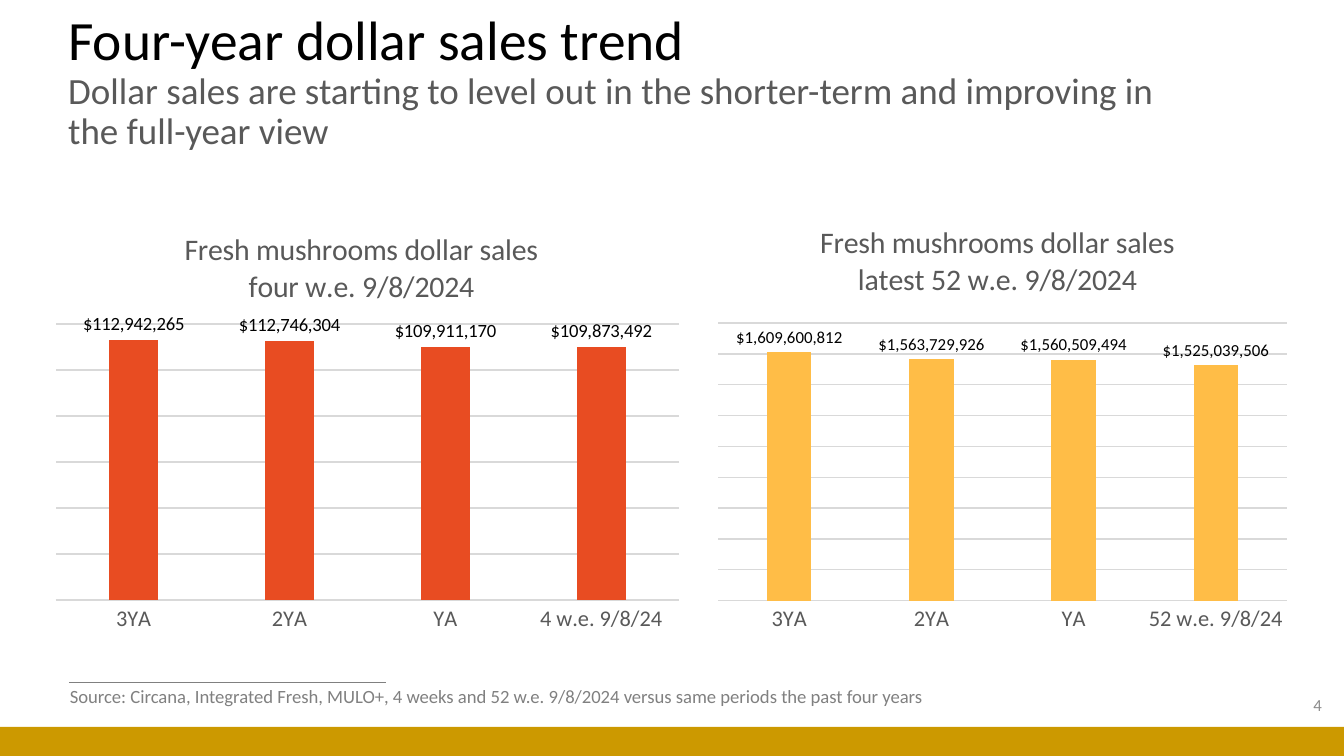
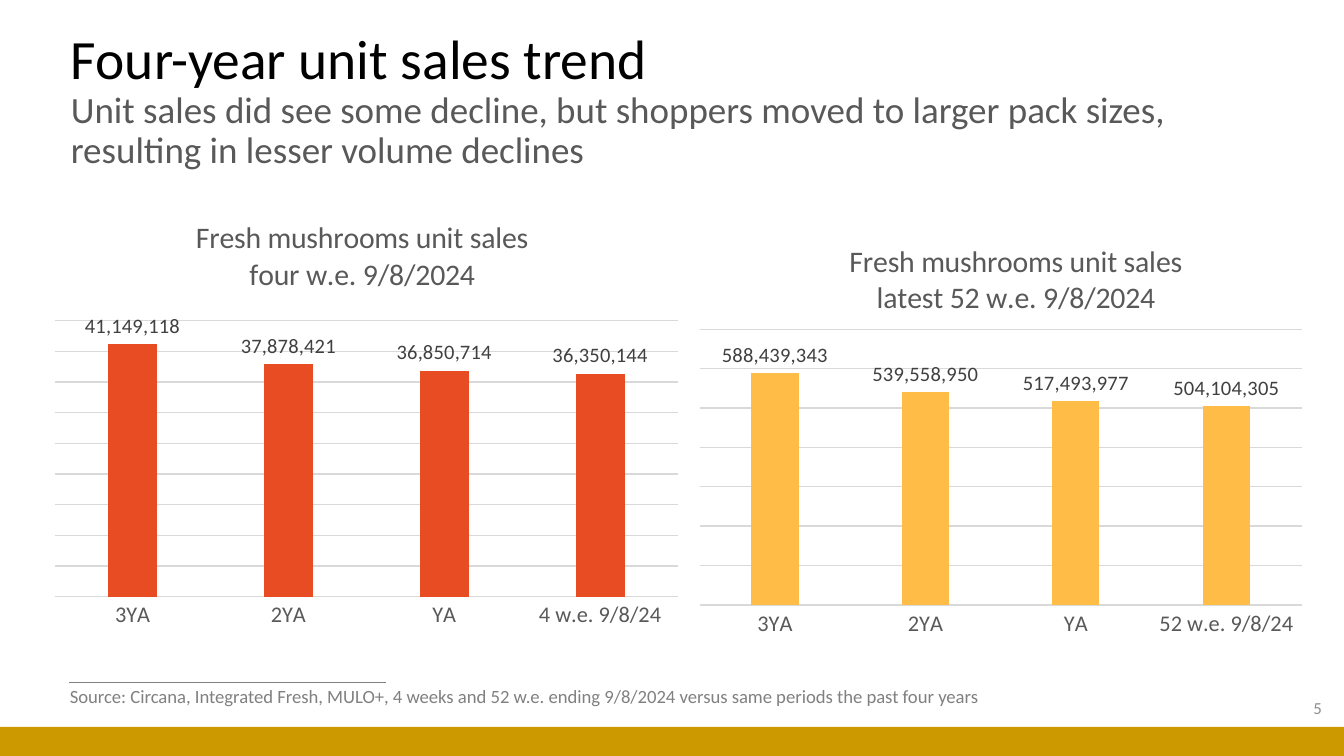
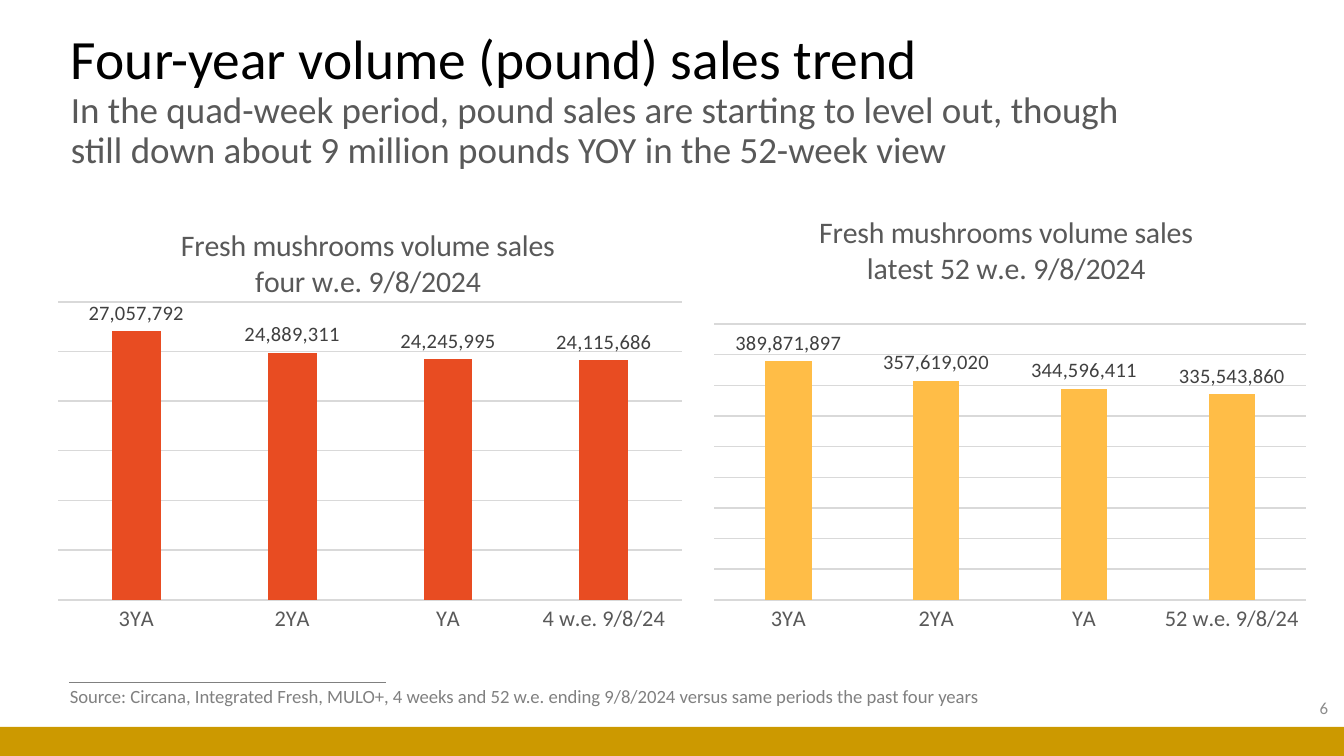
from lxml.etree import SubElement
from pptx import Presentation
from pptx.chart.data import CategoryChartData
from pptx.dml.color import RGBColor
from pptx.enum.chart import XL_CHART_TYPE, XL_LABEL_POSITION, XL_TICK_MARK
from pptx.enum.shapes import MSO_CONNECTOR, MSO_SHAPE
from pptx.enum.text import MSO_ANCHOR, MSO_AUTO_SIZE, PP_ALIGN
from pptx.oxml.ns import qn
from pptx.util import Cm, Pt

FOUR_WEEKS = "4 w.e. 9/8/24"
FULL_YEAR = "52 w.e. 9/8/24"
DOLLARS = r"\$#,##0"
UNITS = "#,##0"


def color(value):
    """Turn a hex string into a colour."""
    return RGBColor.from_string(value)


def set_layout(parent, index, **fractions):
    """Place a chart part by fractions of the chart size."""
    for old_layout in parent.findall(qn("c:layout")):
        parent.remove(old_layout)
    layout = SubElement(parent, qn("c:layout"))
    parent.insert(index, layout)
    manual = SubElement(layout, qn("c:manualLayout"))
    if "w" in fractions:
        SubElement(manual, qn("c:layoutTarget")).set("val", "inner")
    for name in ("x", "y"):
        SubElement(manual, qn(f"c:{name}Mode")).set("val", "edge")
    for name, fraction in fractions.items():
        SubElement(manual, qn(f"c:{name}")).set("val", str(fraction))


class Deck:
    """Holds the shared style and the current slide."""

    font_name = "Calibri"
    black, dark, label_gray = "000000", "595959", "404040"
    number_gray, source_gray, grid = "8C8C8C", "808080", "D9D9D9"
    gold, red, yellow = "CC9900", "E84C22", "FFBD47"

    def __init__(self):
        """Start an empty widescreen presentation."""
        self.presentation = Presentation()
        self.presentation.slide_width = Cm(25.4)
        self.presentation.slide_height = Cm(14.29)
        self.slide = None

    def style(self, font, size, fill):
        """Set the face, size, weight and colour of a font."""
        font.name = self.font_name
        font.size = Pt(size)
        font.bold = False
        font.color.rgb = color(fill)

    def add_run(self, paragraph, text, size, fill):
        """Add one styled run."""
        run = paragraph.add_run()
        run.text = text
        self.style(run.font, size, fill)

    def add_box(self, box, anchor=MSO_ANCHOR.TOP):
        """Add a wrapping text box and return its text frame."""
        frame = self.slide.shapes.add_textbox(*map(Cm, box)).text_frame
        frame.word_wrap = True
        frame.vertical_anchor = anchor
        return frame

    def add_slide(self):
        """Add a blank slide with the source rule and the bottom band."""
        self.slide = self.presentation.slides.add_slide(self.presentation.slide_layouts[6])
        shapes = self.slide.shapes
        rule = shapes.add_connector(MSO_CONNECTOR.STRAIGHT, Cm(1.3), Cm(12.9), Cm(7.29), Cm(12.9))
        rule.line.color.rgb = color(self.source_gray)
        rule.line.width = Pt(0.5)
        SubElement(rule.element.spPr, qn("a:effectLst"))
        band = shapes.add_shape(MSO_SHAPE.RECTANGLE, 0, Cm(13.74), Cm(25.4), Cm(0.55))
        band.shadow.inherit = False
        band.fill.solid()
        band.fill.fore_color.rgb = color(self.gold)
        band.line.fill.background()

    def add_title(self, box, title, subtitle):
        """Add the headline with its subtitle."""
        paragraph = self.add_box(box, MSO_ANCHOR.MIDDLE).paragraphs[0]
        paragraph.line_spacing = 0.9
        self.add_run(paragraph, title, 29.7, self.black)
        paragraph.add_line_break()
        self.add_run(paragraph, subtitle, 19.8, self.dark)

    def add_number(self, left, top, number):
        """Add the slide number."""
        paragraph = self.add_box((left, top, 5.72, 0.76), MSO_ANCHOR.MIDDLE).paragraphs[0]
        paragraph.alignment = PP_ALIGN.RIGHT
        self.add_run(paragraph, number, 9, self.number_gray)

    def add_source(self, width, period):
        """Add the source line."""
        frame = self.add_box((1.07, 12.83, width, 0.69))
        frame.word_wrap = False
        frame.auto_size = MSO_AUTO_SIZE.SHAPE_TO_FIT_TEXT
        text = (f"Source: Circana, Integrated Fresh, MULO+, 4 weeks and 52 {period} "
                "9/8/2024 versus same periods the past four years")
        self.add_run(frame.paragraphs[0], text, 10, self.source_gray)

    def add_chart(self, box, title, title_at, last, values, fill, number_format, plot_area,
                  label):
        """Add a column chart of four yearly values."""
        data = CategoryChartData(number_format=number_format)
        data.categories = ["3YA", "2YA", "YA", last]
        data.add_series("Series 1", values)
        chart = self.slide.shapes.add_chart(
            XL_CHART_TYPE.COLUMN_CLUSTERED, *map(Cm, box), data).chart
        self.style(chart.font, 10, self.black)
        chart.has_legend = False
        self.add_chart_title(chart, title, title_at)
        self.style_axes(chart, number_format)
        set_layout(chart.element.find(".//" + qn("c:plotArea")), 0,
                   **dict(zip("xywh", plot_area)))
        plot = chart.plots[0]
        plot.vary_by_categories = False
        plot.gap_width = 219
        plot.overlap = -27
        series = plot.series[0]
        series.format.fill.solid()
        series.format.fill.fore_color.rgb = color(fill)
        labels = series.data_labels
        labels.show_value = True
        labels.position = XL_LABEL_POSITION.OUTSIDE_END
        labels.number_format = number_format
        labels.number_format_is_linked = False
        self.style(labels.font, *label)

    def add_chart_title(self, chart, lines, title_at):
        """Add a chart title, one paragraph a line."""
        chart.has_title = True
        frame = chart.chart_title.text_frame
        for index, line in enumerate(lines):
            paragraph = frame.add_paragraph() if index else frame.paragraphs[0]
            self.style(paragraph.font, 16, self.dark)
            self.add_run(paragraph, line, 16, self.dark)
        set_layout(chart.chart_title.element, 1, **dict(zip("xy", title_at)))

    def style_axes(self, chart, number_format):
        """Style the category axis and leave only the grid of the value axis."""
        category_axis, value_axis = chart.category_axis, chart.value_axis
        category_axis.major_tick_mark = XL_TICK_MARK.NONE
        self.style(category_axis.tick_labels.font, 12, self.dark)
        value_axis.minimum_scale = 0
        value_axis.has_major_gridlines = True
        value_axis.tick_labels.number_format = number_format
        value_axis.tick_labels.number_format_is_linked = False
        value_axis.visible = False
        for line in (category_axis.format.line, value_axis.major_gridlines.format.line):
            line.color.rgb = color(self.grid)
            line.width = Pt(0.75)

    def add_trend(self, measure, number_format, four_weeks, full_year):
        """Add the four-week and the full-year chart side by side."""
        heading = f"Fresh mushrooms {measure} sales"
        for chart, period, last, fill in (
                (four_weeks, "four w.e. 9/8/2024", FOUR_WEEKS, self.red),
                (full_year, "latest 52 w.e. 9/8/2024", FULL_YEAR, self.yellow)):
            self.add_chart(title=(heading, period), last=last, fill=fill,
                           number_format=number_format, **chart)


def main():
    """Build the three sales trend slides."""
    deck = Deck()
    gray_label = (11, deck.label_gray)

    deck.add_slide()
    deck.add_title((1.04, 0.56, 21.84, 2.01), "Four-year dollar sales trend",
                   "Dollar sales are starting to level out in the shorter-term and "
                   "improving in the full-year view")
    deck.add_number(19.51, 12.95, "4")
    deck.add_source(17.15, "w.e.")
    deck.add_trend(
        "dollar", DOLLARS,
        dict(box=(1.04, 3.94, 11.81, 8.41), plot_area=(0, 0.26, 1, 0.62),
             values=(112942265, 112746304, 109911170, 109873492),
             label=(10, deck.black), title_at=(0.2, 0.04)),
        dict(box=(13.11, 4.14, 11.56, 8.2), plot_area=(0.04, 0.24, 0.93, 0.64),
             values=(1609600812, 1563729926, 1560509494, 1525039506),
             label=(9, deck.black), title_at=(0.2, 0)))

    deck.add_slide()
    deck.add_title((1.09, 0.91, 23.01, 2.01), "Four-year unit sales trend",
                   "Unit sales did see some decline, but shoppers moved to larger pack "
                   "sizes, resulting in lesser volume declines")
    deck.add_number(19.51, 13, "5")
    deck.add_source(18.03, "w.e. ending")
    deck.add_trend(
        "unit", UNITS,
        dict(box=(1.02, 3.71, 11.81, 8.41), plot_area=(0, 0.28, 1, 0.62),
             values=(41149118, 37878421, 36850714, 36350144),
             label=gray_label, title_at=(0.22, 0.04)),
        dict(box=(13.21, 4.14, 11.99, 8.69), plot_area=(0, 0.24, 0.95, 0.6),
             values=(588439343, 539558950, 517493977, 504104305),
             label=gray_label, title_at=(0.23, 0.04)))

    deck.add_slide()
    deck.add_title((1.09, 0.91, 21.21, 2.01), "Four-year volume (pound) sales trend",
                   "In the quad-week period, pound sales are starting to level out, though "
                   "still down about 9 million pounds YOY in the 52-week view")
    deck.add_number(19.63, 13, "6")
    deck.add_source(18.03, "w.e. ending")
    deck.add_trend(
        "volume", UNITS,
        dict(box=(1.09, 3.94, 11.81, 8.41), plot_area=(0, 0.21, 1, 0.67),
             values=(27057792, 24889311, 24245995, 24115686),
             label=gray_label, title_at=(0.19, 0.03)),
        dict(box=(13.49, 3.94, 11.2, 8.41), plot_area=(0, 0.26, 1, 0.62),
             values=(389871897, 357619020, 344596411, 335543860),
             label=gray_label, title_at=(0.17, 0)))

    deck.presentation.save("out.pptx")


if __name__ == "__main__":
    main()
